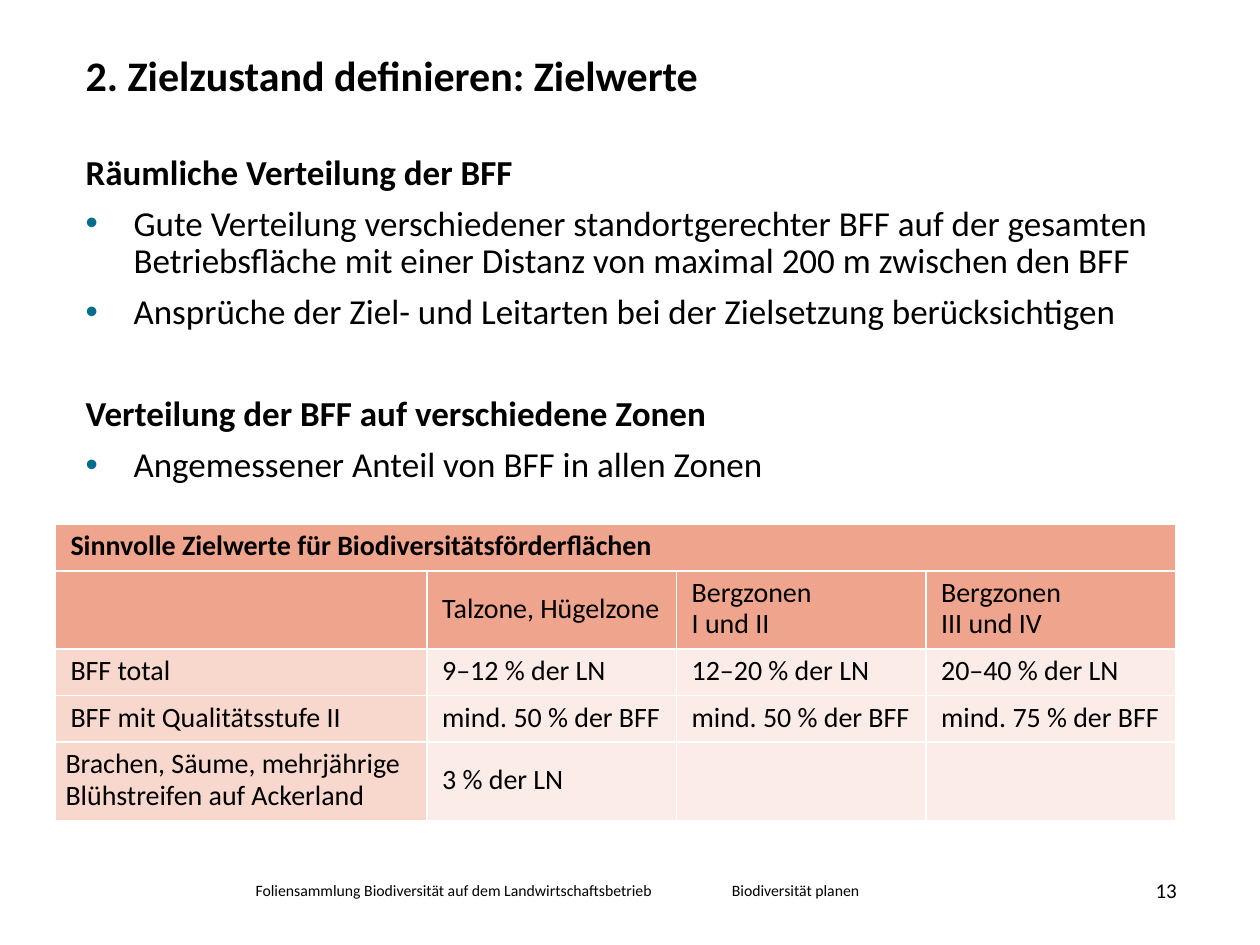
"""Build the slide on target values for biodiversity areas."""
from lxml import etree
from pptx import Presentation
from pptx.dml.color import RGBColor
from pptx.enum.text import MSO_ANCHOR, PP_ALIGN
from pptx.oxml.ns import qn
from pptx.util import Inches, Pt

LEFT, RIGHT = PP_ALIGN.LEFT, PP_ALIGN.RIGHT
TOP, MIDDLE, BOTTOM = MSO_ANCHOR.TOP, MSO_ANCHOR.MIDDLE, MSO_ANCHOR.BOTTOM
COLORS = {"text": "000000", "bullet": "006C8E", "border": "FFFFFF",
          "header": "EFA48D", "label": "F8D7CD", "value": "FCECE8"}


def write(p, text, size, bold=False, align=LEFT, spacing=None, before=0, bullet=False):
    """Fill a paragraph with formatted text."""
    p.text = text
    p.alignment = align
    p.line_spacing = spacing
    p.space_before = Pt(before)
    if bullet:
        pPr = p._p.get_or_add_pPr()
        pPr.set("marL", str(Inches(0.38)))
        pPr.set("indent", str(-Inches(0.38)))
        color = etree.SubElement(pPr, qn("a:buClr"))
        etree.SubElement(color, qn("a:srgbClr"), val=COLORS["bullet"])
        etree.SubElement(pPr, qn("a:buFont"), typeface="Arial")
        etree.SubElement(pPr, qn("a:buChar"), char="•")
    for r in p.runs:
        r.font.name = "Calibri"
        r.font.size = Pt(size)
        r.font.bold = bold
        r.font.color.rgb = RGBColor.from_string(COLORS["text"])


def set_frame(tf, margins, anchor=TOP):
    """Set wrapping, insets and anchor of a text frame."""
    tf.word_wrap = True
    tf.vertical_anchor = anchor
    tf.margin_left, tf.margin_top, tf.margin_right, tf.margin_bottom = map(Inches, margins)


prs = Presentation()
prs.slide_width, prs.slide_height = Inches(10), Inches(7.5)
s = prs.slides.add_slide(prs.slide_layouts[5])

title = s.shapes.title
title.left, title.top, title.width, title.height = map(Inches, (0.68, 0.44, 8.65, 0.69))
set_frame(title.text_frame, (0, 0, 0, 0))
write(title.text_frame.paragraphs[0], "2. Zielzustand definieren: Zielwerte", 24,
      bold=True, spacing=0.9)

body = s.shapes.add_textbox(Inches(0.68), Inches(1.23), Inches(8.89), Inches(2.83))
tf = body.text_frame
set_frame(tf, (0, 0, 0, 0))
paragraphs = [
    ("Räumliche Verteilung der BFF", False, 0),
    ("Gute Verteilung verschiedener standortgerechter BFF auf der gesamten "
     "Betriebsfläche mit einer Distanz von maximal 200 m zwischen den BFF", True, 7.5),
    ("Ansprüche der Ziel- und Leitarten bei der Zielsetzung berücksichtigen", True, 7.5),
    ("Verteilung der BFF auf verschiedene Zonen", False, 36.5),
    ("Angemessener Anteil von BFF in allen Zonen", True, 7.5),
]
for i, (text, bullet, before) in enumerate(paragraphs):
    p = tf.add_paragraph() if i else tf.paragraphs[0]
    write(p, text, 20, bold=not bullet, spacing=0.9, before=before, bullet=bullet)

rows = [
    ["Sinnvolle Zielwerte für Biodiversitätsförderflächen", "", "", ""],
    ["", "Talzone, Hügelzone", "Bergzonen\nI und II", "Bergzonen\nIII und IV"],
    ["BFF total", "9–12 % der LN", "12–20 % der LN", "20–40 % der LN"],
    ["BFF mit Qualitätsstufe II", "mind. 50 % der BFF", "mind. 50 % der BFF",
     "mind. 75 % der BFF"],
    ["Brachen, Säume, mehrjährige Blühstreifen auf Ackerland", "3 % der LN", "", ""],
]
col_widths = [2.95, 1.98, 1.98, 1.98]
row_heights = [0.36, 0.61, 0.36, 0.36, 0.61]
table = s.shapes.add_table(len(rows), len(col_widths), Inches(0.44), Inches(4.16),
                           Inches(sum(col_widths)), Inches(sum(row_heights))).table
for column, width in zip(table.columns, col_widths):
    column.width = Inches(width)
for row, height in zip(table.rows, row_heights):
    row.height = Inches(height)
for i, texts in enumerate(rows):
    for j, text in enumerate(texts):
        cell = table.cell(i, j)
        cell.vertical_anchor = MIDDLE
        cell.margin_left = Inches(0.08 if (i, j) == (4, 0) else 0.12)
        cell.margin_top = cell.margin_right = cell.margin_bottom = Inches(0.06)
        write(cell.text_frame.paragraphs[0], text, 16, bold=i == 0, spacing=Pt(18))
        tcPr = cell._tc.get_or_add_tcPr()
        for side in ("a:lnL", "a:lnR", "a:lnT", "a:lnB"):
            line = etree.SubElement(tcPr, qn(side), w=str(Pt(1)))
            fill = etree.SubElement(line, qn("a:solidFill"))
            etree.SubElement(fill, qn("a:srgbClr"), val=COLORS["border"])
        role = "header" if i < 2 else "value" if j else "label"
        cell.fill.solid()
        cell.fill.fore_color.rgb = RGBColor.from_string(COLORS[role])
table.cell(0, 0).merge(table.cell(0, 3))

footers = [
    ("Foliensammlung Biodiversität auf dem Landwirtschaftsbetrieb",
     (1.93, 6.94, 3.46, 0.25), 9, LEFT, TOP, 0.1),
    ("Biodiversität planen", (5.71, 6.94, 2.28, 0.25), 9, LEFT, TOP, 0.1),
    ("13", (8.47, 6.82, 0.87, 0.39), 12, RIGHT, BOTTOM, 0),
]
for text, box, size, align, anchor, inset in footers:
    sp = s.shapes.add_textbox(*map(Inches, box))
    set_frame(sp.text_frame, (inset, 0.05, inset, 0.05), anchor)
    write(sp.text_frame.paragraphs[0], text, size, align=align)

prs.save("out.pptx")
